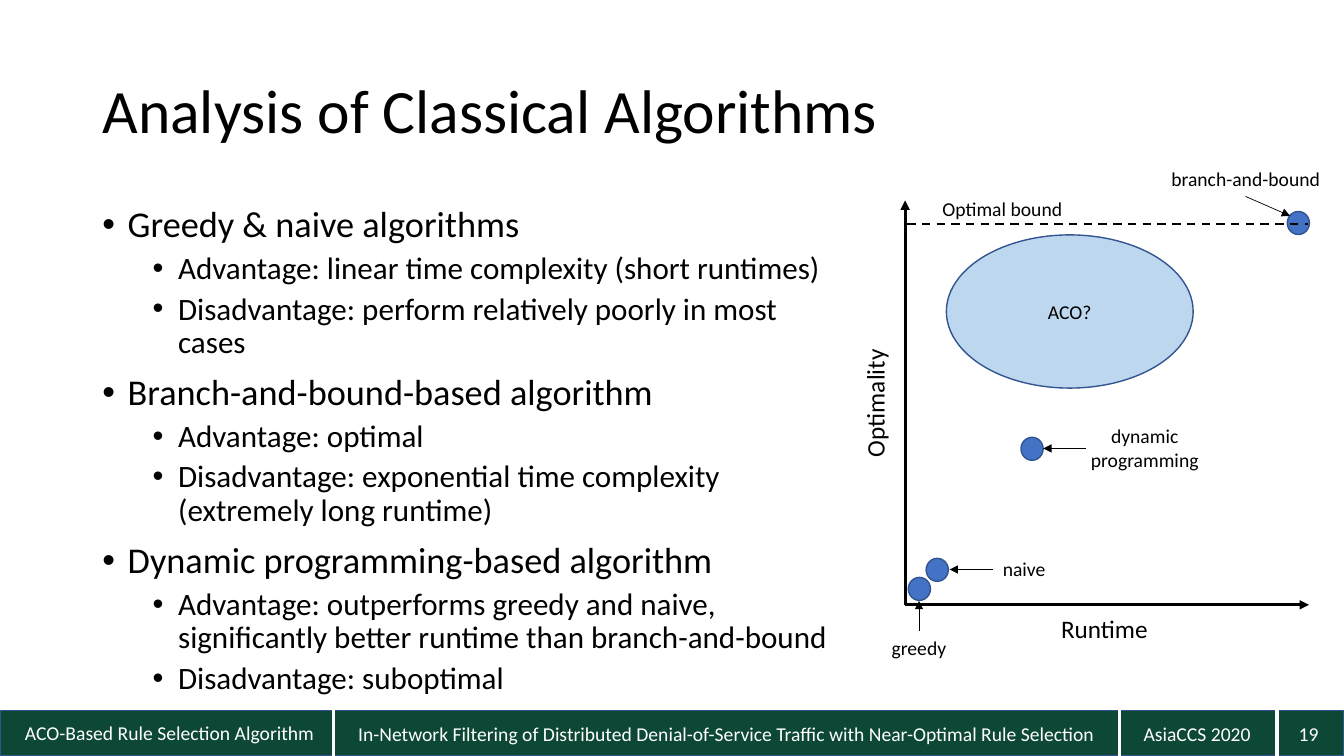
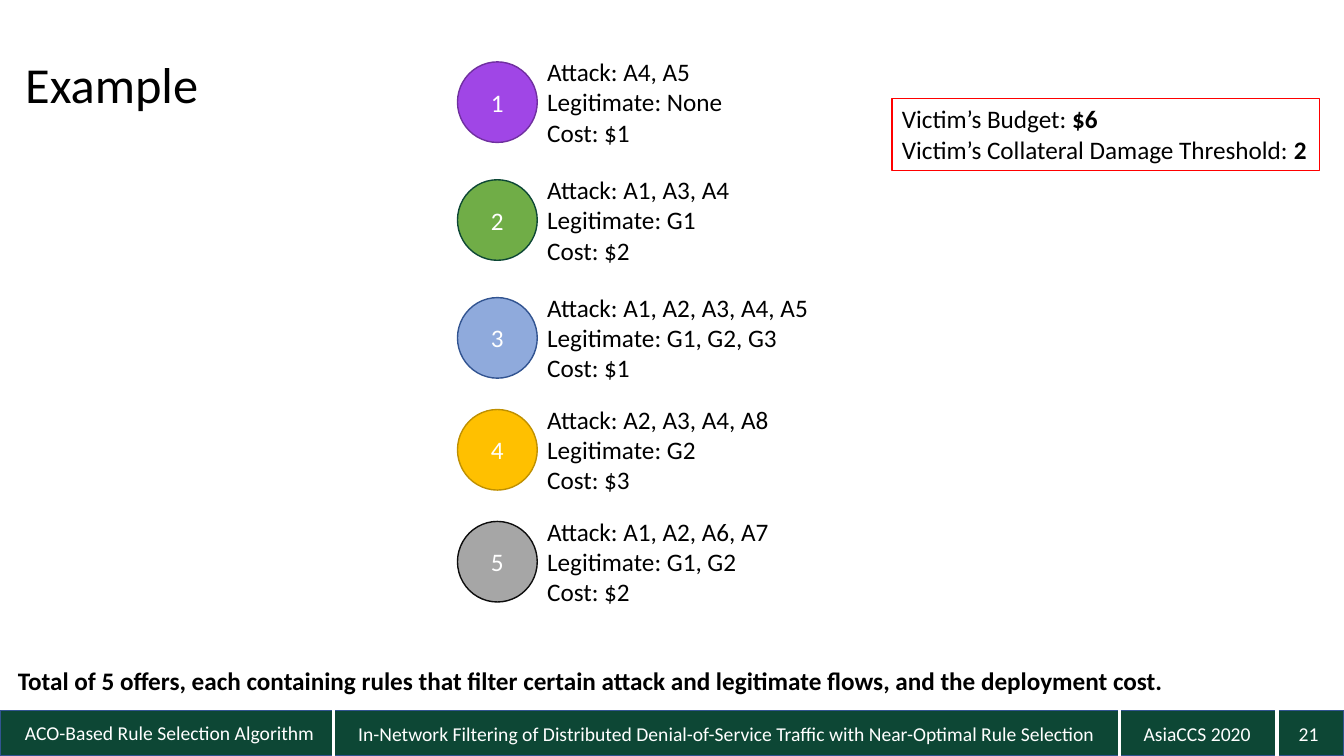
"""Build two slides on rule selection: an analysis plot and a worked example."""

from dataclasses import dataclass
from typing import NamedTuple

from lxml.etree import SubElement as Sub
from pptx import Presentation
from pptx.dml.color import RGBColor as Rgb
from pptx.enum.dml import MSO_LINE as Dash
from pptx.enum.shapes import MSO_CONNECTOR as Conn, MSO_SHAPE as Geo
from pptx.enum.text import MSO_ANCHOR as Anchor, MSO_AUTO_SIZE as Fit, PP_ALIGN as Align
from pptx.oxml.ns import qn
from pptx.util import Cm, Pt


@dataclass(frozen=True)
class Theme:
    """Hold the colours, font and type sizes of the deck."""

    font: str = "Calibri"
    ink: str = "000000"
    paper: str = "FFFFFF"
    band: str = "0D4735"
    edge: str = "325491"
    dot: str = "4472C4"
    cloud: str = "BDD7EE"
    alert: str = "FF0000"
    head: float = 44
    title: float = 36
    point: float = 25.9
    detail: float = 22.2
    text: float = 18
    small: float = 14


class Box(NamedTuple):
    """Place a shape, in centimetres."""

    x: float
    y: float
    w: float
    h: float


class Run(NamedTuple):
    """Give a piece of text and its weight."""

    text: str
    bold: bool = False


class Style(NamedTuple):
    """Describe how text is set."""

    size: float
    color: str
    align: Align = Align.LEFT
    anchor: Anchor = Anchor.TOP
    wrap: bool = True


class Line(NamedTuple):
    """Describe a straight line from one point to another."""

    x: float
    y: float
    to_x: float
    to_y: float
    width: float
    color: str
    arrow: bool = False
    dash: bool = False


class Label(NamedTuple):
    """Describe a text with its place and style."""

    text: str
    box: Box
    style: Style
    turn: float = 0


class Offer(NamedTuple):
    """Describe a numbered offer of filter rules."""

    y: float
    fill: str
    edge: str
    attack: str
    legit: str
    cost: int


class Topic(NamedTuple):
    """Describe a bullet point with its details."""

    name: str
    items: tuple[str, ...]


T = Theme()
BODY = Style(T.text, T.ink)
AXIS = Style(T.text, T.ink, wrap=False)
NOTE = Style(T.small, T.ink)
MID = Style(T.small, T.ink, Align.CENTER)
FOOT = Style(T.small, T.paper, Align.CENTER)
WIDE, HIGH = 33.87, 19.05

FOOTER = (
    Label("ACO-Based Rule Selection Algorithm", Box(0.38, 18.03, 8, 0.86),
          FOOT._replace(align=Align.LEFT)),
    Label("In-Network Filtering of Distributed Denial-of-Service Traffic with "
          "Near-Optimal Rule Selection", Box(8.76, 18.06, 19.1, 0.86), FOOT),
    Label("AsiaCCS 2020", Box(28.52, 18.06, 3.3, 0.86), FOOT),
)
SPLITS = (8.41, 28.22, 32.18)

TOPICS = (
    Topic("Greedy & naive algorithms", (
        "Advantage: linear time complexity (short runtimes)",
        "Disadvantage: perform relatively poorly in most cases")),
    Topic("Branch-and-bound-based algorithm", (
        "Advantage: optimal",
        "Disadvantage: exponential time complexity (extremely long runtime)")),
    Topic("Dynamic programming-based algorithm", (
        "Advantage: outperforms greedy and naive, significantly better runtime "
        "than branch-and-bound",
        "Disadvantage: suboptimal")),
)

DOTS = ((22.89, 14.55), (23.34, 14.07), (25.73, 11.02), (32.44, 5.33))
LINES = (
    Line(22.81, 15.24, 32.99, 15.24, 2.25, T.ink, arrow=True),
    Line(22.81, 15.24, 22.81, 5.05, 2.25, T.ink, arrow=True),
    Line(22.86, 5.64, 32.97, 5.64, 1.5, T.ink, dash=True),
    Line(31.39, 4.95, 32.51, 5.44, 0.5, T.ink, arrow=True),
    Line(27.38, 11.3, 26.29, 11.3, 0.5, T.ink, arrow=True),
    Line(25.02, 14.35, 23.93, 14.35, 0.5, T.ink, arrow=True),
    Line(23.16, 15.9, 23.16, 15.14, 0.5, T.ink, arrow=True),
)
LABELS = (
    Label("Optimality", Box(20.42, 9.63, 3.25, 1.02), AXIS, 270),
    Label("Runtime", Box(26.49, 15.34, 2.72, 1.02), AXIS),
    Label("branch-and-bound", Box(29.16, 4.09, 4.47, 0.86), MID),
    Label("dynamic programming", Box(27.2, 10.57, 3.3, 1.45), MID),
    Label("naive", Box(24.82, 13.92, 1.98, 0.86), MID),
    Label("greedy", Box(22.17, 15.9, 1.98, 0.86), MID),
    Label("Optimal bound", Box(23.5, 4.83, 6.22, 0.86), NOTE),
)

OFFERS = (
    Offer(1.3, "A046E6", "7030A0", "A4, A5", "None", 1),
    Offer(4.27, "70AD47", T.band, "A1, A3, A4", "G1", 2),
    Offer(7.24, "8FAADC", T.edge, "A1, A2, A3, A4, A5", "G1, G2, G3", 1),
    Offer(10.06, "FFC000", "BF9000", "A2, A3, A4, A8", "G2", 3),
    Offer(12.88, "A6A6A6", "0D0D0D", "A1, A2, A6, A7", "G1, G2", 2),
)


def area(box: Box) -> tuple:
    """Turn a box into lengths."""
    return tuple(Cm(v) for v in box)


def write(para, runs: tuple[Run, ...], style: Style) -> None:
    """Fill a paragraph run by run."""
    para.alignment = style.align
    for item in runs:
        run = para.add_run()
        run.text = item.text
        font = run.font
        font.name, font.size, font.bold = T.font, Pt(style.size), item.bold
        font.color.rgb = Rgb.from_string(style.color)


def fill(frame, rows: tuple[tuple[Run, ...], ...], style: Style) -> None:
    """Fill a text frame, one row to a paragraph."""
    frame.word_wrap = style.wrap
    frame.auto_size = Fit.NONE
    frame.vertical_anchor = style.anchor
    for num, runs in enumerate(rows):
        para = frame.add_paragraph() if num else frame.paragraphs[0]
        write(para, runs, style)


def add_text(shapes, label: Label) -> None:
    """Add a text box with a row for each line of its text."""
    box = shapes.add_textbox(*area(label.box))
    box.rotation = label.turn
    fill(box.text_frame, tuple((Run(row),) for row in label.text.split("\n")), label.style)


def add_form(shapes, geo: Geo, box: Box, color: str | None, edge: str, width: float = 1):
    """Add a flat preset shape, hollow if it has no colour."""
    form = shapes.add_shape(geo, *area(box))
    form.shadow.inherit = False
    if color:
        form.fill.solid()
        form.fill.fore_color.rgb = Rgb.from_string(color)
    else:
        form.fill.background()
    form.line.color.rgb = Rgb.from_string(edge)
    form.line.width = Pt(width)
    return form


def add_line(shapes, line: Line) -> None:
    """Add a straight connector."""
    link = shapes.add_connector(Conn.STRAIGHT, *(Cm(v) for v in line[:4]))
    link.line.color.rgb = Rgb.from_string(line.color)
    link.line.width = Pt(line.width)
    if line.dash:
        link.line.dash_style = Dash.DASH
    props = link.element.spPr
    if line.arrow:
        Sub(props.find(qn("a:ln")), qn("a:tailEnd"), type="triangle")
    Sub(props, qn("a:effectLst"))


def add_point(frame, text: str, level: int) -> None:
    """Add a bullet point at a level."""
    first = frame.paragraphs[0]
    para = frame.add_paragraph() if first.runs else first
    para.level = level
    para.line_spacing = 0.9
    para.space_before = Pt(5 if level else 10)
    props = para._p.get_or_add_pPr()
    props.set("marL", str(Cm(1.91 if level else 0.64)))
    props.set("indent", str(Cm(-0.64)))
    Sub(props, qn("a:buFont"), typeface="Arial")
    Sub(props, qn("a:buChar"), char="•")
    write(para, (Run(text),), Style(T.detail if level else T.point, T.ink))


def add_slide(deck, title: str, size: float, box: Box, page: int):
    """Add a slide with its title and footer band, and return its shapes."""
    shapes = deck.slides.add_slide(deck.slide_layouts[5]).shapes
    head = shapes.title
    head.left, head.top, head.width, head.height = area(box)
    fill(head.text_frame, ((Run(title),),), Style(size, T.ink, anchor=Anchor.MIDDLE))
    head.text_frame.paragraphs[0].line_spacing = 0.9
    add_form(shapes, Geo.RECTANGLE, Box(0, 17.91, WIDE, 1.14), T.band, T.edge)
    number = Label(str(page), Box(25.86, 17.98, 7.62, 1.02),
                   FOOT._replace(align=Align.RIGHT, anchor=Anchor.MIDDLE))
    for label in (*FOOTER, number):
        add_text(shapes, label)
    for x in SPLITS:
        add_line(shapes, Line(x, 17.7, x, HIGH, 2.25, T.paper))
    return shapes


def add_plot(shapes) -> None:
    """Draw the plot of optimality against runtime."""
    for x, y in DOTS:
        add_form(shapes, Geo.OVAL, Box(x, y, 0.56, 0.58), T.dot, T.edge)
    for line in LINES:
        add_line(shapes, line)
    cloud = add_form(shapes, Geo.OVAL, Box(23.85, 5.92, 6.22, 3.86), T.cloud, T.edge)
    fill(cloud.text_frame, ((Run("ACO?"),),), MID._replace(anchor=Anchor.MIDDLE))
    for label in LABELS:
        add_text(shapes, label)


def add_offer(shapes, num: int, offer: Offer) -> None:
    """Add a group of a numbered disc and the terms of its offer."""
    group = shapes.add_group_shape().shapes
    disc = add_form(group, Geo.OVAL, Box(11.53, offer.y + 0.26, 2.01, 2.03),
                    offer.fill, offer.edge)
    fill(disc.text_frame, ((Run(str(num)),),),
         Style(T.text, T.paper, Align.CENTER, Anchor.MIDDLE))
    terms = f"Attack: {offer.attack}\nLegitimate: {offer.legit}\nCost: ${offer.cost}"
    add_text(group, Label(terms, Box(13.54, offer.y, 8.74, 2.57), BODY))


def main() -> None:
    """Build and save the deck."""
    deck = Presentation()
    deck.slide_width, deck.slide_height = Cm(WIDE), Cm(HIGH)

    shapes = add_slide(deck, "Analysis of Classical Algorithms", T.head,
                       Box(2.33, 1.02, 29.21, 3.68), 19)
    frame = shapes.add_textbox(*area(Box(2.33, 5.08, 19.2, 12.09))).text_frame
    frame.word_wrap = True
    for topic in TOPICS:
        add_point(frame, topic.name, 0)
        for item in topic.items:
            add_point(frame, item, 1)
    add_plot(shapes)

    shapes = add_slide(deck, "Example", T.title, Box(0.38, 0.36, 29.21, 3.68), 21)
    for num, offer in enumerate(OFFERS, 1):
        add_offer(shapes, num, offer)
    total = shapes.add_textbox(*area(Box(0.2, 16.64, 33.3, 1.02)))
    fill(total.text_frame, ((Run("Total of 5 offers, each containing rules that filter certain "
                                 "attack and legitimate flows, and the deployment cost.", True),),),
         BODY)
    limits = add_form(shapes, Geo.RECTANGLE, Box(22.48, 2.49, 10.77, 1.8), None, T.alert, 0.75)
    fill(limits.text_frame, ((Run("Victim’s Budget: "), Run("$6", True)),
                             (Run("Victim’s Collateral Damage Threshold: "), Run("2", True))), BODY)
    deck.save("out.pptx")


if __name__ == "__main__":
    main()
